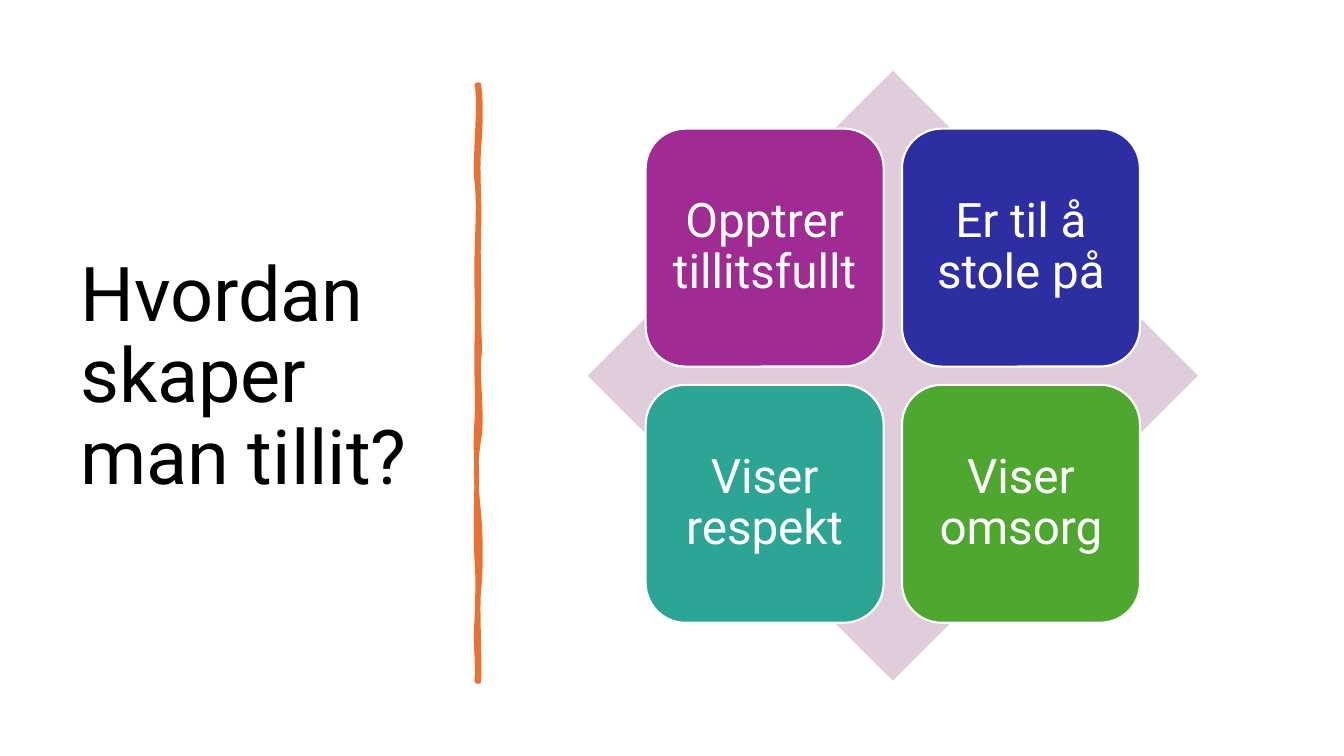
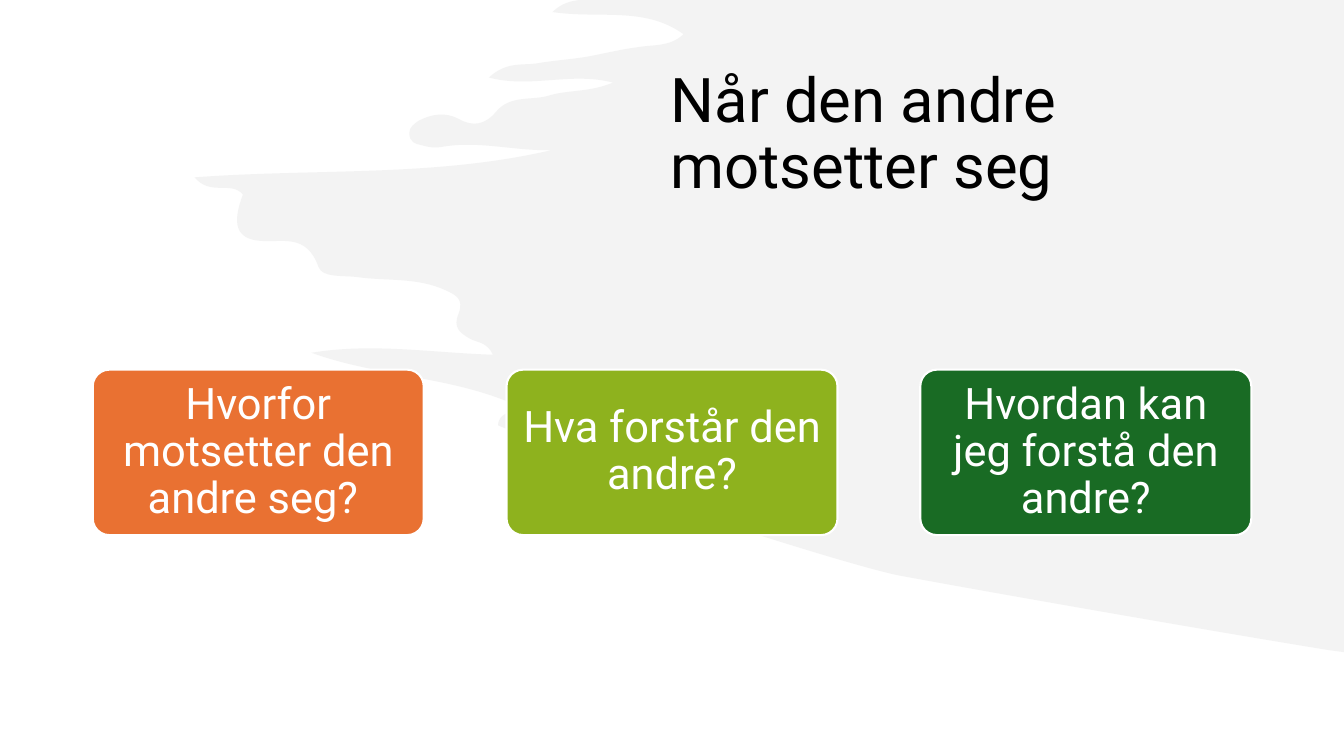
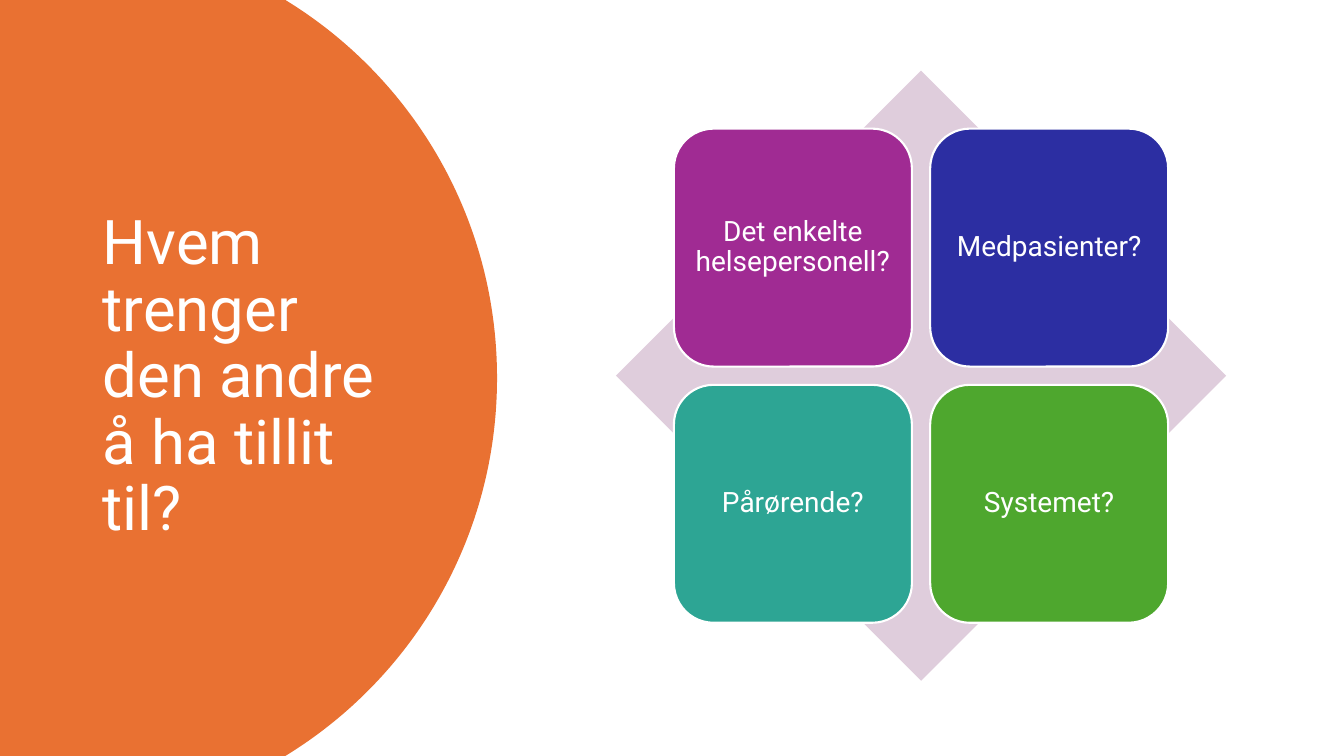
from dataclasses import dataclass

from lxml import etree
from pptx import Presentation
from pptx.dml.color import RGBColor
from pptx.enum.shapes import MSO_SHAPE
from pptx.enum.text import MSO_ANCHOR, MSO_AUTO_SIZE, PP_ALIGN
from pptx.oxml.ns import qn
from pptx.util import Inches, Pt

DIAMOND = MSO_SHAPE.DIAMOND
ROUNDED = MSO_SHAPE.ROUNDED_RECTANGLE
LEFT, CENTER = PP_ALIGN.LEFT, PP_ALIGN.CENTER
MIDDLE = MSO_ANCHOR.MIDDLE
NO_AUTOFIT = MSO_AUTO_SIZE.NONE

SLIDE_WIDTH, SLIDE_HEIGHT = Inches(13.33), Inches(7.5)
TITLE_ONLY = 5


@dataclass(frozen=True)
class Theme:
    font: str = "Roboto"
    black: str = "000000"
    white: str = "FFFFFF"
    orange: str = "E97132"
    brush: str = "E8E8E8"
    diamond: str = "DFCDDC"
    tiles: tuple = ("A02B93", "2C2EA2", "2DA594", "4EA72E")
    cards: tuple = ("E97132", "8EB21E", "196B24")
    title_large: int = 54
    title: int = 44
    tile_large: int = 34
    card: int = 31
    tile_small: int = 20
    border: float = 1.5
    stroke: float = 3.25
    line_spacing: float = 0.9


THEME = Theme()

# Curved outlines in inches: each row holds two control points and an end point
DIVIDER_START = (4.75, 0.84)
DIVIDER_RIGHT = [
    (4.77, 1.02, 4.77, 1.19, 4.75, 1.46), (4.73, 1.73, 4.76, 1.95, 4.75, 2.26),
    (4.74, 2.57, 4.75, 2.62, 4.75, 2.94), (4.74, 3.25, 4.77, 3.42, 4.75, 3.56),
    (4.73, 3.7, 4.79, 4.14, 4.75, 4.36), (4.71, 4.57, 4.72, 4.84, 4.75, 5.1),
    (4.77, 5.36, 4.77, 5.64, 4.75, 5.84), (4.73, 6.03, 4.76, 6.5, 4.75, 6.76),
]
DIVIDER_LEFT = [
    (4.74, 6.76, 4.73, 6.76, 4.73, 6.76),
    (4.74, 6.46, 4.71, 6.44, 4.73, 6.13), (4.74, 5.83, 4.74, 5.7, 4.73, 5.57),
    (4.72, 5.44, 4.72, 4.95, 4.73, 4.77), (4.73, 4.59, 4.71, 4.45, 4.73, 4.15),
    (4.74, 3.86, 4.72, 3.73, 4.73, 3.35), (4.74, 2.98, 4.72, 2.81, 4.73, 2.5),
    (4.74, 2.18, 4.75, 2, 4.73, 1.81), (4.7, 1.63, 4.77, 1.04, 4.73, 0.84),
]

BRUSH_START = (5.75, 0)
BRUSH_EDGE = [
    (5.67, 0.01, 5.57, 0.03, 5.48, 0.12), (5.95, 0.19, 6.39, 0.06, 6.78, 0.34),
    (6.64, 0.47, 6.48, 0.44, 6.32, 0.47), (6.16, 0.49, 6, 0.53, 5.84, 0.56),
    (5.67, 0.59, 5.49, 0.6, 5.32, 0.63), (5.18, 0.65, 5.02, 0.61, 4.85, 0.77),
    (5.27, 0.88, 5.66, 0.71, 6.08, 0.82), (5.84, 0.92, 5.63, 0.89, 5.44, 0.95),
    (5.27, 1, 5.06, 0.94, 4.92, 1.11), (4.81, 1.24, 4.69, 1.26, 4.55, 1.18),
    (4.42, 1.11, 4.28, 1.13, 4.15, 1.2), (4.11, 1.23, 4.06, 1.26, 4.06, 1.32),
    (4.06, 1.41, 4.12, 1.43, 4.18, 1.44), (4.24, 1.46, 4.31, 1.47, 4.37, 1.46),
    (4.74, 1.39, 5.1, 1.5, 5.47, 1.49), (4.31, 1.76, 3.14, 1.67, 1.93, 1.76),
    (2.09, 1.95, 2.29, 1.79, 2.41, 1.93), (2.3, 2.22, 2.34, 2.37, 2.58, 2.39),
    (2.8, 2.41, 3.04, 2.31, 3.16, 2.65), (3.2, 2.76, 3.41, 2.73, 3.55, 2.75),
    (3.84, 2.79, 4.14, 2.75, 4.42, 2.88), (4.53, 2.93, 4.6, 2.97, 4.55, 3.11),
    (4.49, 3.25, 4.56, 3.3, 4.66, 3.36), (4.73, 3.4, 4.83, 3.39, 4.89, 3.52),
    (4.28, 3.5, 3.69, 3.4, 3.09, 3.5), (3.75, 3.74, 4.47, 3.73, 5.12, 4.02),
    (5.1, 4.12, 4.95, 4.07, 4.94, 4.22), (5.28, 4.38, 5.69, 4.27, 6.05, 4.5),
    (5.84, 4.61, 5.65, 4.44, 5.45, 4.54), (5.52, 4.69, 8.4, 5.61, 8.92, 5.71),
    (9.78, 5.87, 11.95, 6.25, 13.18, 6.45),
]
BRUSH_CORNERS = [(13.33, 6.47), (13.33, 0)]

DISC_START = (2.83, 0)
DISC_EDGE = [
    (4.09, 0.77, 4.93, 2.16, 4.93, 3.75), (4.93, 5.34, 4.09, 6.73, 2.83, 7.5),
]
DISC_CORNERS = [(0, 7.5), (0, 0)]


# Lengths as percentages of the slide
def across(percent):
    return round(SLIDE_WIDTH * percent / 100)


def down(percent):
    return round(SLIDE_HEIGHT * percent / 100)


# Text and shape styling
def write(shape, text, size, color, align):
    frame = shape.text_frame
    frame.word_wrap = True
    frame.auto_size = NO_AUTOFIT
    frame.vertical_anchor = MIDDLE
    para = frame.paragraphs[0]
    para.alignment = align
    para.line_spacing = THEME.line_spacing
    span = para.add_run()
    span.text = text
    span.font.name = THEME.font
    span.font.size = Pt(size)
    span.font.color.rgb = RGBColor.from_string(color)


def paint(shape, fill, line=None, width=0):
    shape.shadow.inherit = False
    shape.fill.solid()
    shape.fill.fore_color.rgb = RGBColor.from_string(fill)
    if line:
        shape.line.color.rgb = RGBColor.from_string(line)
        shape.line.width = Pt(width)
    else:
        shape.line.fill.background()


def set_opacity(shape, percent):
    color = shape.element.spPr.find(qn("a:solidFill")).find(qn("a:srgbClr"))
    etree.SubElement(color, qn("a:alpha")).set("val", str(percent * 1000))


# Kinds of element
def add_title(page, text, left, top, width, height, size=THEME.title,
              color=THEME.black):
    title = page.shapes.title
    title.left, title.top = across(left), down(top)
    title.width, title.height = across(width), down(height)
    write(title, text, size, color, LEFT)
    title.element.getparent().append(title.element)  # above the backdrop


def bend(shape, count):
    """Turn the first segments, three at a time, into cubic curves."""
    segments = list(shape.element.iter(qn("a:lnTo")))
    for index in range(0, count * 3, 3):
        trio = segments[index:index + 3]
        curve = etree.Element(qn("a:cubicBezTo"))
        trio[0].addprevious(curve)
        for segment in trio:
            curve.append(segment[0])
            segment.getparent().remove(segment)


def add_outline(page, start, curves, corners=()):
    points = [row[i:i + 2] for row in curves for i in (0, 2, 4)]
    points.extend(corners)
    builder = page.shapes.build_freeform(Inches(start[0]), Inches(start[1]))
    builder.add_line_segments([(Inches(x), Inches(y)) for x, y in points])
    outline = builder.convert_to_shape()
    bend(outline, len(curves))
    return outline


def add_tile(page, frame, text, size, fill, insets, corner):
    tile = page.shapes.add_shape(ROUNDED, *frame)
    tile.adjustments[0] = corner
    paint(tile, fill, THEME.white, THEME.border)
    text_frame = tile.text_frame
    text_frame.margin_left = text_frame.margin_right = Inches(insets[0])
    text_frame.margin_top = text_frame.margin_bottom = Inches(insets[1])
    write(tile, text, size, THEME.white, CENTER)


def add_matrix(page, left, texts, size, inset):
    """Four tiles, two by two, on a diamond."""
    x, y, side = across(left), down(9.35), down(80.7)
    paint(page.shapes.add_shape(DIAMOND, x, y, side, side), THEME.diamond)
    margin, tile, step = (round(side * s) for s in (0.095, 0.39, 0.42))
    for index, (text, fill) in enumerate(zip(texts, THEME.tiles)):
        row, column = divmod(index, 2)
        frame = (x + margin + column * step, y + margin + row * step,
                 tile, tile)
        add_tile(page, frame, text, size, fill, (inset, inset), 1 / 6)


def add_cards(page, texts):
    """A row of cards with gaps of a quarter card."""
    width = across(24.63)
    for index, (text, fill) in enumerate(zip(texts, THEME.cards)):
        frame = (across(6.9) + round(index * width * 1.25), down(48.9),
                 width, width // 2)
        add_tile(page, frame, text, THEME.card, fill, (0.06, 0.04), 0.1)


# Slides
def build_trust_slide(page):
    divider = add_outline(page, DIVIDER_START, DIVIDER_RIGHT + DIVIDER_LEFT)
    paint(divider, THEME.orange, THEME.orange, THEME.stroke)
    add_title(page, "Hvordan skaper man tillit?", 5.21, 9.3, 28, 81.5,
              size=THEME.title_large)
    add_matrix(page, 43.73, ["Opptrer tillitsfullt", "Er til å stole på",
                             "Viser respekt", "Viser omsorg"],
               THEME.tile_large, 0.14)


def build_resistance_slide(page):
    brush = add_outline(page, BRUSH_START, BRUSH_EDGE, BRUSH_CORNERS)
    paint(brush, THEME.brush)
    set_opacity(brush, 50)
    add_title(page, "Når den andre motsetter seg", 49.15, 4.1, 44, 27.6)
    add_cards(page, ["Hvorfor motsetter den andre seg? ",
                     "Hva forstår den andre?",
                     "Hvordan kan jeg forstå den andre?"])


def build_who_slide(page):
    disc = add_outline(page, DISC_START, DISC_EDGE, DISC_CORNERS)
    paint(disc, THEME.orange)
    add_title(page, "Hvem trenger den andre å ha tillit til?",
              6.9, 9.35, 24.2, 81.2, color=THEME.white)
    add_matrix(page, 45.83, ["Det enkelte helsepersonell?", "Medpasienter?",
                             "Pårørende?", "Systemet?"],
               THEME.tile_small, 0.08)


def main():
    deck = Presentation()
    deck.slide_width, deck.slide_height = SLIDE_WIDTH, SLIDE_HEIGHT
    for build in (build_trust_slide, build_resistance_slide, build_who_slide):
        build(deck.slides.add_slide(deck.slide_layouts[TITLE_ONLY]))
    deck.save("out.pptx")


if __name__ == "__main__":
    main()
